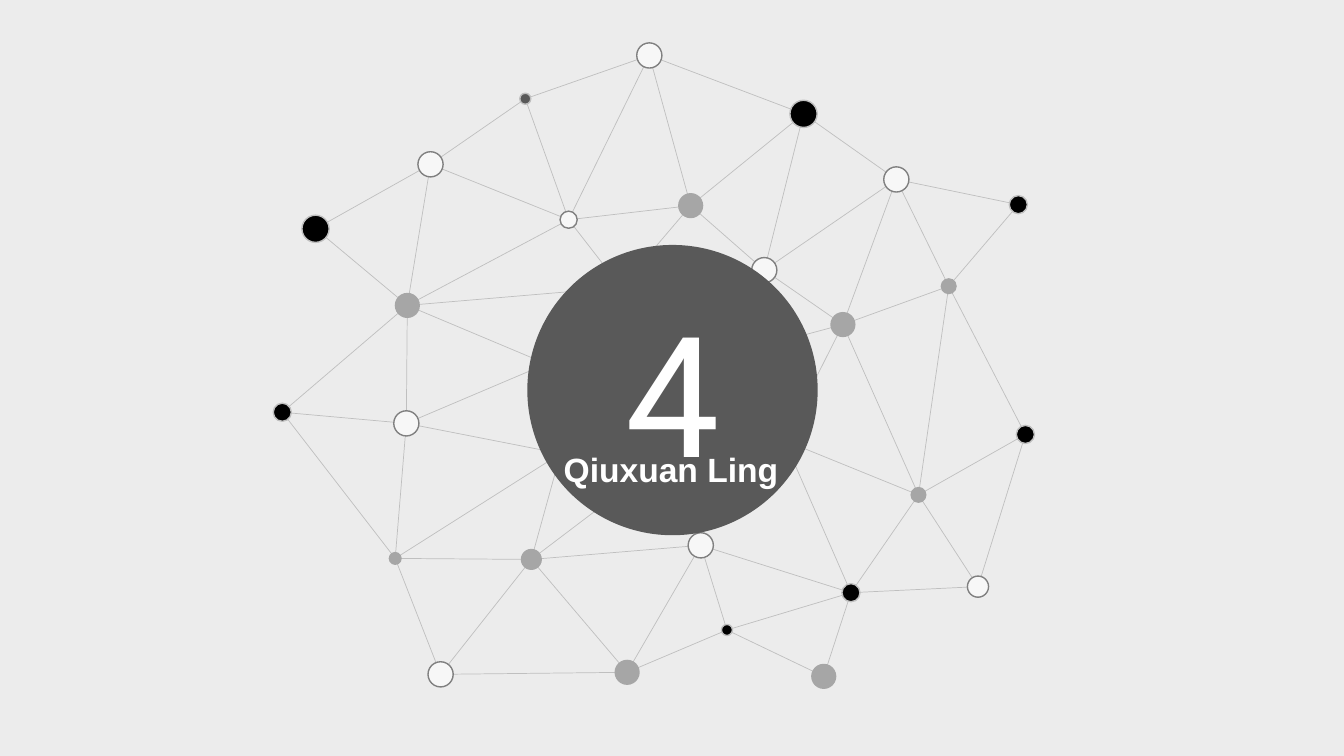
from dataclasses import dataclass

from lxml.etree import SubElement
from pptx import Presentation
from pptx.dml.color import RGBColor
from pptx.enum.shapes import MSO_CONNECTOR as Connector, MSO_SHAPE as Shape
from pptx.enum.text import MSO_ANCHOR as Anchor, MSO_AUTO_SIZE as AutoSize, PP_ALIGN as Align
from pptx.oxml.ns import qn
from pptx.util import Inches, Pt


@dataclass(frozen=True)
class Theme:
    background: str = "ECECEC"
    black: str = "000000"
    dark: str = "595959"
    grey: str = "A6A6A6"
    pale: str = "F7F7F7"
    rim: str = "808080"
    link: str = "BFBFBF"
    text: str = "FFFFFF"
    number_font: str = "Roboto"
    name_font: str = "Arial"
    number_size: int = 120
    name_size: int = 24
    link_width: float = 0.5
    rim_width: float = 1


THEME = Theme()
DISC_CENTRE, DISC_SIZE = (6.67, 3.87), 2.88

DOT_GROUPS = [
    (THEME.black, THEME.link, 0.27, {"a": (3.13, 2.27), "b": (7.97, 1.13)}),
    (THEME.black, THEME.link, 0.18, {
        "c": (2.8, 4.09), "d": (10.17, 4.31), "e": (10.1, 2.03), "f": (8.44, 5.88)}),
    (THEME.black, THEME.link, 0.11, {"g": (7.21, 6.25)}),
    (THEME.dark, THEME.link, 0.11, {"h": (5.21, 0.98)}),
    (THEME.pale, THEME.rim, 0.25, {
        "i": (4.03, 4.2), "j": (6.95, 5.41), "k": (6.44, 0.55), "l": (4.27, 1.63),
        "m": (7.58, 2.68), "n": (8.89, 1.78), "o": (4.37, 6.69)}),
    (THEME.pale, THEME.rim, 0.21, {"p": (9.7, 5.82)}),
    (THEME.pale, THEME.rim, 0.17, {"q": (5.64, 2.18)}),
    (THEME.grey, None, 0.25, {
        "r": (6.85, 2.04), "s": (8.36, 3.22), "t": (4.04, 3.03),
        "u": (8.17, 6.71), "v": (6.22, 6.67)}),
    (THEME.grey, None, 0.21, {"w": (5.27, 5.55)}),
    (THEME.grey, None, 0.16, {"x": (9.11, 4.91), "y": (9.41, 2.84)}),
    (THEME.grey, None, 0.13, {"z": (3.92, 5.54)}),
]

HUBS = {
    "A": (5.42, 3.61), "B": (5.56, 4.5), "C": (6.22, 4.83),
    "D": (7.78, 4.37), "E": (6.16, 2.85), "F": (6.8, 3.64),
}

NEIGHBOURS = {
    "a": "tl", "b": "kmnr", "c": "zit", "d": "pxy", "e": "ny", "f": "Dxpugj",
    "g": "jvu", "h": "lkq", "i": "zABt", "j": "wv", "k": "qr", "l": "tq",
    "m": "srn", "n": "ys", "o": "vwz", "p": "x", "q": "Etr", "r": "E",
    "s": "xyDF", "t": "AE", "v": "w", "w": "BzC", "x": "yD", "z": "B",
}


def colour(value):
    return RGBColor.from_string(value)


def add_link(page, start, end):
    link = page.shapes.add_connector(Connector.STRAIGHT, *map(Inches, start + end))
    link.line.color.rgb = colour(THEME.link)
    link.line.width = Pt(THEME.link_width)
    SubElement(link.element.spPr, qn("a:effectLst"))


def add_circle(page, centre, size, fill, rim=None):
    left, top = (Inches(middle - size / 2) for middle in centre)
    circle = page.shapes.add_shape(Shape.OVAL, left, top, Inches(size), Inches(size))
    circle.shadow.inherit = False
    circle.fill.solid()
    circle.fill.fore_color.rgb = colour(fill)
    if rim:
        circle.line.color.rgb = colour(rim)
        circle.line.width = Pt(THEME.rim_width)
    else:
        circle.line.fill.background()
    return circle


def add_network(page):
    points = dict(HUBS)
    for fill, rim, size, centres in DOT_GROUPS:
        points.update(centres)
    for start, ends in NEIGHBOURS.items():
        for end in ends:
            add_link(page, points[start], points[end])
    for fill, rim, size, centres in DOT_GROUPS:
        for centre in centres.values():
            add_circle(page, centre, size, fill, rim)


def write(box, text, font, size, bold, anchor):
    frame = box.text_frame
    frame.text = text
    frame.vertical_anchor = anchor
    para = frame.paragraphs[0]
    para.alignment = Align.CENTER
    para.font.name = font
    para.font.size = Pt(size)
    para.font.bold = bold
    para.font.color.rgb = colour(THEME.text)


def set_title(page, text, left, top, width, height):
    title = page.shapes.title
    title.left, title.top, title.width, title.height = map(Inches, (left, top, width, height))
    write(title, text, THEME.name_font, THEME.name_size, True, Anchor.TOP)
    title.text_frame.word_wrap = False
    title.text_frame.auto_size = AutoSize.SHAPE_TO_FIT_TEXT
    title.element.getparent().append(title.element)


def main():
    deck = Presentation()
    deck.slide_width, deck.slide_height = Inches(13.33), Inches(7.5)
    page = deck.slides.add_slide(deck.slide_layouts[5])
    page.background.fill.solid()
    page.background.fill.fore_color.rgb = colour(THEME.background)

    add_network(page)
    disc = add_circle(page, DISC_CENTRE, DISC_SIZE, THEME.dark)
    write(disc, "4", THEME.number_font, THEME.number_size, False, Anchor.MIDDLE)
    set_title(page, "Qiuxuan Ling", 5.49, 4.4, 2.33, 0.5)
    deck.save("out.pptx")


if __name__ == "__main__":
    main()
